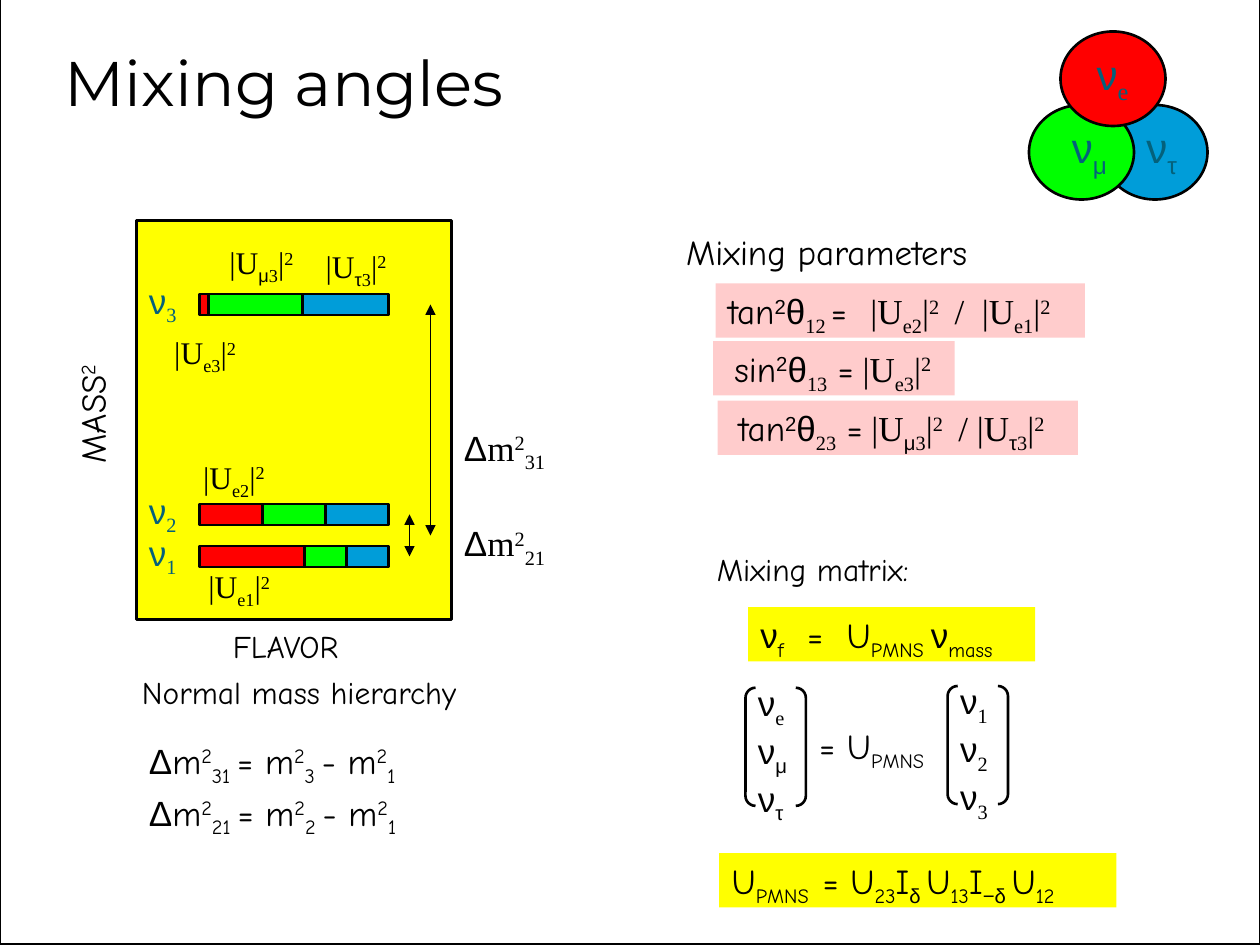
from lxml import etree
from pptx import Presentation
from pptx.dml.color import RGBColor
from pptx.enum.shapes import MSO_CONNECTOR, MSO_SHAPE
from pptx.enum.text import MSO_ANCHOR, MSO_AUTO_SIZE, PP_ALIGN
from pptx.oxml.ns import qn
from pptx.util import Pt

RECT, OVAL = MSO_SHAPE.RECTANGLE, MSO_SHAPE.OVAL
BRACKETS = MSO_SHAPE.DOUBLE_BRACKET
STRAIGHT = MSO_CONNECTOR.STRAIGHT
GROW = MSO_AUTO_SIZE.SHAPE_TO_FIT_TEXT
TOP, CENTER = MSO_ANCHOR.TOP, PP_ALIGN.CENTER

BLACK = RGBColor(0, 0, 0)
WHITE = RGBColor(255, 255, 255)
YELLOW = RGBColor(255, 255, 0)
PINK = RGBColor(0xFF, 0xCC, 0xCC)
RED = RGBColor(255, 0, 0)
GREEN = RGBColor(0, 255, 0)
BLUE = RGBColor(0x00, 0x9D, 0xD9)
TEAL = RGBColor(0x04, 0x61, 0x7B)

FONTS = {"A": "Arial", "C": "Comic Neue", "T": "Times New Roman"}
SHIFTS = {"^": "30000", "_": "-25000"}


def add_runs(par, code, size, color):
    """Each run is a font letter, a level (- ^ _), then its text; ; parts runs."""
    for part in code.split(";"):
        run = par.add_run()
        run.text = part[2:]
        font = run.font
        font.name, font.size = FONTS[part[0]], Pt(size)
        font.color.rgb = color
        if part[1] in SHIFTS:
            run._r.get_or_add_rPr().set("baseline", SHIFTS[part[1]])


def add_text(slide, x, y, w, h, *codes, size=20, color=BLACK, fill=None, wrap=False):
    """One paragraph for each code."""
    box = slide.shapes.add_textbox(Pt(x), Pt(y), Pt(w), Pt(h))
    if fill is not None:
        box.fill.solid()
        box.fill.fore_color.rgb = fill
    frame = box.text_frame
    frame.word_wrap, frame.auto_size = wrap, GROW
    for i, code in enumerate(codes):
        par = frame.add_paragraph() if i else frame.paragraphs[0]
        add_runs(par, code, size, color)
    return box


def add_form(slide, kind, x, y, w, h, fill=None, line=1.5):
    form = slide.shapes.add_shape(kind, Pt(x), Pt(y), Pt(w), Pt(h))
    form.shadow.inherit = False
    if fill is None:
        form.fill.background()
    else:
        form.fill.solid()
        form.fill.fore_color.rgb = fill
    form.line.color.rgb, form.line.width = BLACK, Pt(line)
    return form


def add_arrow(slide, x, top, end):
    """Vertical line with a head at both ends."""
    line = slide.shapes.add_connector(STRAIGHT, Pt(x), Pt(top), Pt(x), Pt(end))
    line.line.color.rgb, line.line.width = BLACK, Pt(0.75)
    props = line._element.spPr
    for tag in ("a:headEnd", "a:tailEnd"):
        etree.SubElement(props.get_or_add_ln(), qn(tag), type="triangle")
    etree.SubElement(props, qn("a:effectLst"))


def add_title(slide, x, y, w, h):
    title = slide.shapes.title
    title.left, title.top, title.width, title.height = Pt(x), Pt(y), Pt(w), Pt(h)
    frame = title.text_frame
    frame.word_wrap, frame.vertical_anchor = False, TOP
    frame.auto_size = MSO_AUTO_SIZE.NONE
    par = frame.paragraphs[0]
    par.alignment = CENTER
    run = par.add_run()
    run.text = "Mixing angles"
    run.font.name, run.font.size = "Montserrat", Pt(36)
    run.font.color.rgb = BLACK


def add_flavors(slide, x, y):
    for dx, dy, fill in ((42, 42, BLUE), (0, 42, GREEN), (18, 0, RED)):
        add_form(slide, OVAL, x + dx, y + dy, 60, 54, fill)
    for dx, dy, w, sub in ((17.5, 48, 36, "A_μ"), (60, 48, 34, "A_τ"), (31.5, 6, 34, "T_e")):
        add_text(slide, x + dx, y + dy, w, 36, "A-ν;" + sub, size=24, color=TEAL)


def add_levels(slide, x, y, w, h):
    """Mass levels, with each bar split by flavour."""
    add_form(slide, RECT, x, y, w, h, YELLOW)
    levels = ((3, 42, (0, 5, 59, 108)), (2, 162, (0, 36, 72, 108)), (1, 186, (0, 60, 84, 108)))
    for num, dy, cuts in levels:
        add_text(slide, x, y + dy - 12, 31.5, 31, f"A-ν;T_{num}", color=TEAL)
        for left, right, fill in zip(cuts, cuts[1:], (RED, GREEN, BLUE)):
            add_form(slide, RECT, x + 36 + left, y + dy, right - left, 12, fill)

    labels = ((14.5, 61, "T_e3"), (46, 9.5, "A_μ;T_3"), (101, 11.5, "A_τ;T_3"),
              (34, 194.5, "T_e1"), (31, 132, "T_e2"))
    for dx, dy, sub in labels:
        add_text(slide, x + dx, y + dy, 52, 29, f"T-|U;{sub};T-|;T^2", size=18)

    add_arrow(slide, x + 168, y + 48, y + 180)
    add_arrow(slide, x + 156, y + 168, y + 192)
    for dy, sub in ((114, "31"), (168.5, "21")):
        add_text(slide, x + w, y + dy, 62, 31, f"A-Δ;T-m;T^2;T_{sub}")

    add_text(slide, x - 67, y + 88.5, 83.5, 31.5, "C-MASS;C^2").rotation = 270
    add_text(slide, x + 48, y + h + 1, 86, 29, "C-FLAVOR", size=18)
    add_text(slide, x - 4, y + h + 27, 212, 29, "C-Normal mass hierarchy", size=18)
    for dy, num in ((65, 3), (94.5, 2)):
        code = f"A-Δ;C-m;C^2;C_{num}1 ;C-= m;C^2;C_{num} ;C-- m;C^2;C_1"
        add_text(slide, x, y + h + dy, 164, 31, code, fill=WHITE)


def add_params(slide, x, y):
    add_text(slide, x, y, 191, 32, "C-Mixing parameters")
    rows = (
        (24, 34, 211, "C-tan;A^2;A-θ;T_12 ;C-=  ;T-|U;T_e2;T-|;T^2   ;T-/  |U;T_e1;T-|;T^2"),
        (22.5, 67, 138, "T- ;C-sin;A^2;A-θ;T_13  ;C-=;T- |U;T_e3;T-|;T^2"),
        (25, 101, 206, "T- ;C-tan;A^2;A-θ;T_23  ;C-=;T- |U;A_μ;T_3;T-|;T^2   ;"
                       "T-/ |U;A_τ;T_3;T-|;T^2"),
    )
    for dx, dy, w, code in rows:
        add_text(slide, x + dx, y + dy, w, 31, code, fill=PINK, wrap=dy == 34)


def add_matrix(slide, x, y):
    add_text(slide, x, y, 137, 29, "C-Mixing matrix:", size=18)
    add_text(slide, x + 25, y + 36, 164, 31,
             "A-ν;C_f;C-  =  U;C_PMNS ;A-ν;C_mass", fill=YELLOW)
    add_text(slide, x + 58.5, y + 99.5, 83, 31, "C-= U;C_PMNS")
    vectors = ((23.5, 75, 36, ("T_e", "A_μ", "A_τ")), (139, 74, 31.5, ("T_1", "T_2", "T_3")))
    for dx, dy, w, subs in vectors:
        add_text(slide, x + dx, y + dy, w, 80, *("A-ν;" + sub for sub in subs))
        add_form(slide, BRACKETS, x + dx, y + dy + 7, 34.5, 67.5)
    add_text(slide, x + 8.5, y + 176.5, 227, 31,
             "C-U;C_PMNS  ;C-= U;C_23;C-I;A_δ ;C-U;C_13;C-I;A_−δ ;C-U;C_12", fill=YELLOW)


def main():
    deck = Presentation()
    deck.slide_width, deck.slide_height = Pt(720), Pt(540)
    slide = deck.slides.add_slide(deck.slide_layouts[5])
    add_form(slide, RECT, 0, -0.5, 720, 540, WHITE, 0.75)
    # The title must lie in front of the page frame.
    slide.shapes._spTree.append(slide.shapes.title._element)
    add_title(slide, 26, 21, 273, 70)
    add_flavors(slide, 588, 18)
    add_levels(slide, 78, 126, 180, 228)
    add_params(slide, 385, 128)
    add_matrix(slide, 402.5, 311)
    deck.save("out.pptx")


if __name__ == "__main__":
    main()
